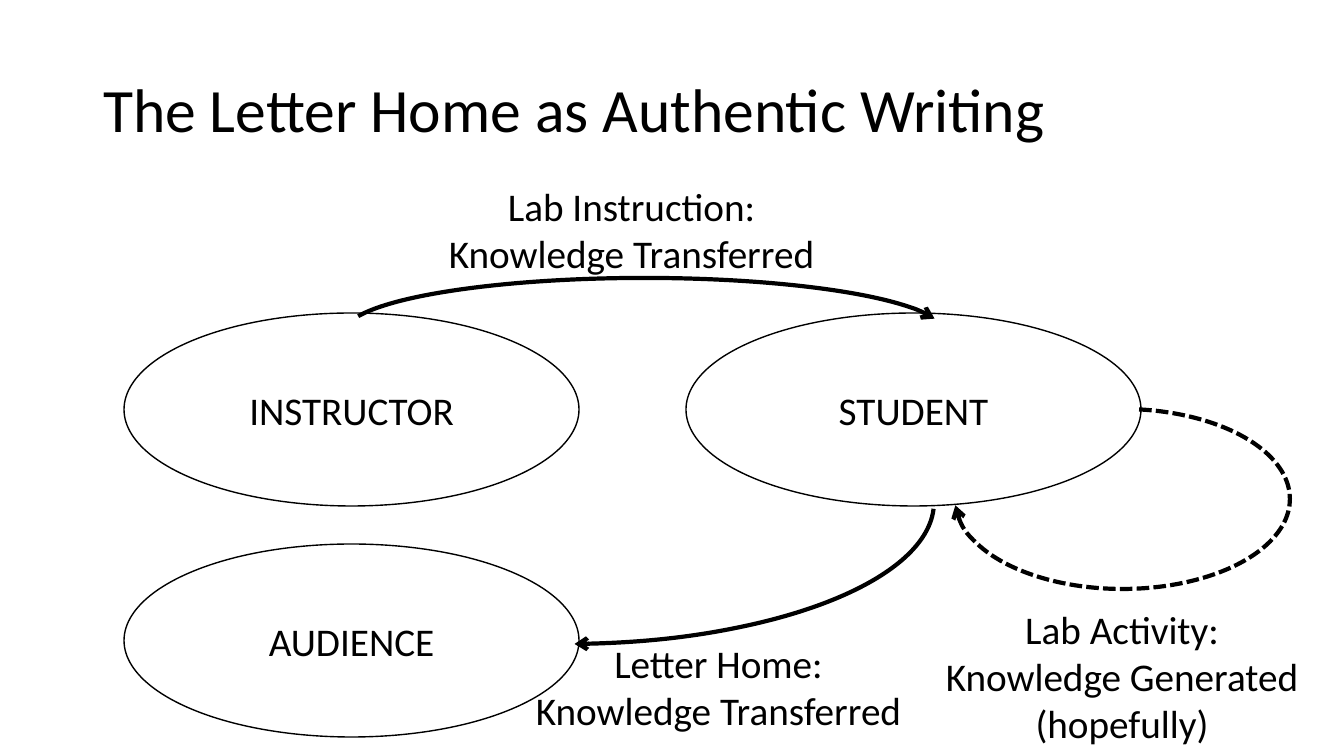
from dataclasses import dataclass

from lxml import etree
from pptx import Presentation
from pptx.dml.color import RGBColor
from pptx.enum.dml import MSO_LINE
from pptx.enum.shapes import MSO_SHAPE
from pptx.enum.text import MSO_ANCHOR, MSO_AUTO_SIZE, PP_ALIGN
from pptx.oxml.ns import qn
from pptx.util import Emu, Pt

ARC, ELLIPSE = MSO_SHAPE.ARC, MSO_SHAPE.OVAL
LEFT, CENTER = PP_ALIGN.LEFT, PP_ALIGN.CENTER
MIDDLE = MSO_ANCHOR.MIDDLE
GROW = MSO_AUTO_SIZE.SHAPE_TO_FIT_TEXT
SOLID, DASHED = MSO_LINE.SOLID, MSO_LINE.SQUARE_DOT
TITLE_ONLY = 5
EMU_PER_PX = 914400 / 100.8
DEGREE = 0.6  # one degree in the units of shape.adjustments


@dataclass(frozen=True)
class Theme:
    ink: RGBColor = RGBColor(0, 0, 0)
    font: str = "Calibri"
    title_size: int = 44
    text_size: int = 28
    outline_width: int = 1
    arrow_width: int = 3


THEME = Theme()


def px(length):
    return Emu(round(length * EMU_PER_PX))


def emu_box(box):
    return [px(length) for length in box]


def write(text_frame, text, size, alignment):
    text_frame.text = text
    for paragraph in text_frame.paragraphs:
        paragraph.alignment = alignment
        for run in paragraph.runs:
            run.font.name = THEME.font
            run.font.size = Pt(size)
            run.font.color.rgb = THEME.ink


def add_outline(slide, preset, box, width):
    shape = slide.shapes.add_shape(preset, *emu_box(box))
    shape.shadow.inherit = False
    shape.fill.background()
    shape.line.color.rgb = THEME.ink
    shape.line.width = Pt(width)
    return shape


def add_title(slide, box, text):
    title = slide.shapes.title
    title.left, title.top, title.width, title.height = emu_box(box)
    write(title.text_frame, text, THEME.title_size, LEFT)
    title.text_frame.vertical_anchor = MIDDLE
    title.text_frame.paragraphs[0].line_spacing = 0.9


def add_role(slide, box, name):
    role = add_outline(slide, ELLIPSE, box, THEME.outline_width)
    write(role.text_frame, name, THEME.text_size, CENTER)
    role.text_frame.vertical_anchor = MIDDLE


def add_roles(slide, box):
    """Place the three roles on a two-by-two grid, its last cell left free."""
    left, top, width, height = box
    role_width, role_height = 455, 193
    column_step, row_step = width - role_width, height - role_height
    for name, column, row in (("INSTRUCTOR", 0, 0), ("STUDENT", 1, 0), ("AUDIENCE", 0, 1)):
        add_role(slide, (left + column * column_step, top + row * row_step,
                         role_width, role_height), name)


def add_arc_arrow(slide, box, start, end, arrow_end="tailEnd", dash=SOLID, flipped=False):
    """Draw an arc clockwise between two angles given in degrees."""
    arc = add_outline(slide, ARC, box, THEME.arrow_width)
    arc.adjustments[0] = start * DEGREE
    arc.adjustments[1] = end * DEGREE
    arc.line.dash_style = dash
    properties = arc._element.spPr
    if flipped:
        properties.find(qn("a:xfrm")).set("flipV", "1")
    etree.SubElement(properties.find(qn("a:ln")), qn("a:" + arrow_end), type="arrow")


def add_label(slide, box, text):
    label = slide.shapes.add_textbox(*emu_box(box))
    label.text_frame.word_wrap = False
    label.text_frame.auto_size = GROW
    write(label.text_frame, text, THEME.text_size, CENTER)


def build_slide(presentation):
    slide = presentation.slides.add_slide(presentation.slide_layouts[TITLE_ONLY])
    add_title(slide, (93, 40, 1159, 146), "The Letter Home as Authentic Writing")
    add_roles(slide, (124, 313, 1017, 424))

    add_arc_arrow(slide, (344, 278, 601, 110), 183.35, 357.18)
    add_arc_arrow(slide, (955, 409, 335, 180), 280.52, 177.82, dash=DASHED)
    add_arc_arrow(slide, (196, 361, 738, 283), 273.87, 359.02,
                  arrow_end="headEnd", flipped=True)

    add_label(slide, (437, 177, 389, 105), "Lab Instruction:\nKnowledge Transferred")
    add_label(slide, (934, 600, 376, 152), "Lab Activity:\nKnowledge Generated\n(hopefully)")
    add_label(slide, (524, 634, 389, 105), "Letter Home:\nKnowledge Transferred")


def main():
    presentation = Presentation()
    presentation.slide_width, presentation.slide_height = px(1344), px(756)
    build_slide(presentation)
    presentation.save("out.pptx")


if __name__ == "__main__":
    main()
